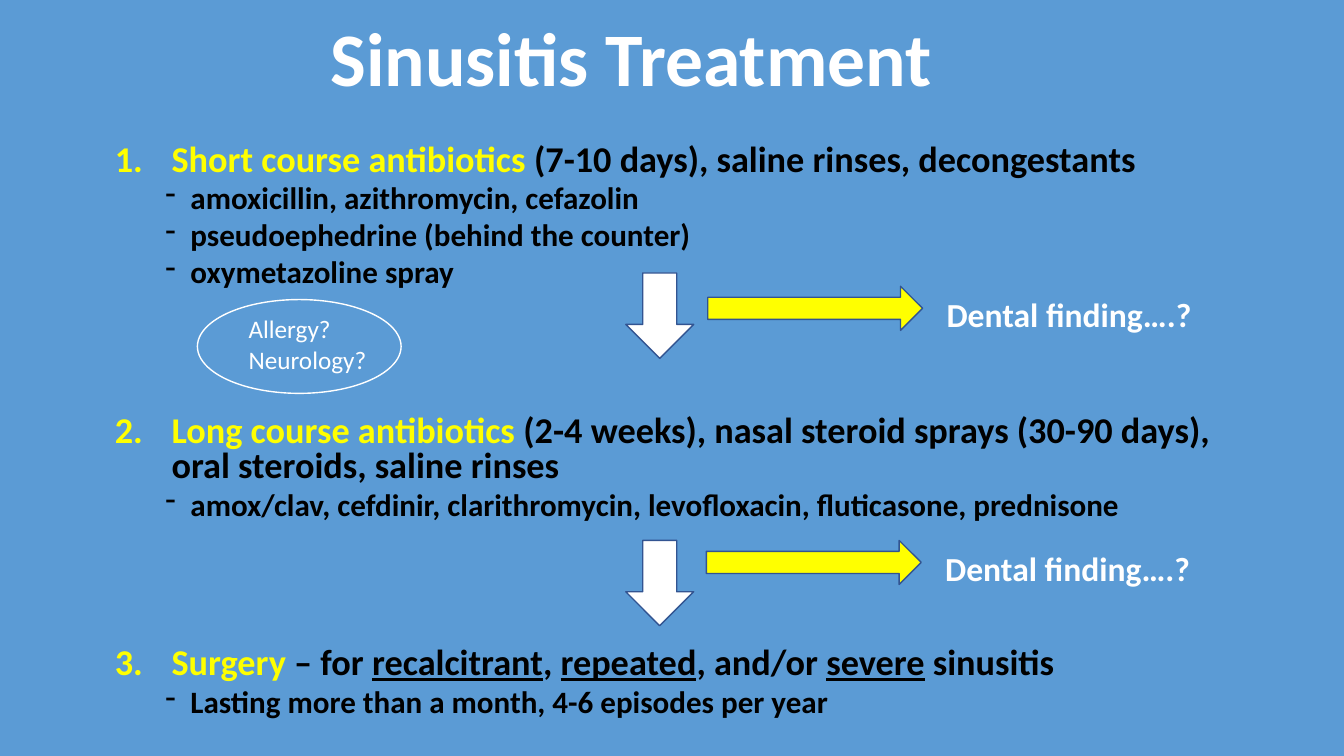
"""Build the sinusitis treatment slide: three numbered steps joined by arrows."""
from dataclasses import dataclass

from lxml.etree import SubElement
from pptx import Presentation
from pptx.dml.color import RGBColor
from pptx.enum.shapes import MSO_SHAPE as Preset
from pptx.enum.text import MSO_ANCHOR as Anchor, PP_ALIGN as Align
from pptx.oxml.ns import qn
from pptx.util import Pt


@dataclass(frozen=True)
class Theme:
    """Colours, font and type sizes."""
    font: str = "Calibri"
    background: str = "5B9BD5"
    white: str = "FFFFFF"
    black: str = "000000"
    yellow: str = "FFFF00"
    outline: str = "325491"
    title: float = 54
    step: float = 25.9
    detail: float = 22.2
    label: float = 24
    aside: float = 18


THEME = Theme()
TITLE = "Sinusitis Treatment"
STEPS = [
    ("Short course antibiotics ",
     [("(7-10 days), saline rinses, decongestants", False)],
     ["amoxicillin, azithromycin, cefazolin",
      "pseudoephedrine (behind the counter)",
      "oxymetazoline spray"]),
    ("Long course antibiotics ",
     [("(2-4 weeks), nasal steroid sprays (30-90 days), "
       "oral steroids, saline rinses", False)],
     ["amox/clav, cefdinir, clarithromycin, levofloxacin, "
      "fluticasone, prednisone"]),
    ("Surgery ",
     [("– for ", False), ("recalcitrant", True), (", ", False),
      ("repeated", True), (", and/or ", False), ("severe", True),
      (" sinusitis", False)],
     ["Lasting more than a month, 4-6 episodes per year"]),
]
BRANCH_LABEL = "Dental finding….?"
ASIDE = ["Allergy?", "Neurology?"]

SLIDE_SIZE = (960, 540)
TITLE_BOX = (66, -8, 770, 104.5)
STEPS_BOX = (75, 99.5, 828, 440)
ASIDE_BOX = (170.5, 220.5, 115, 51)
ASIDE_RING = (141, 214, 145.5, 67)
DOWN_LEFT, DOWN_SIZE = 447, (48.5, 61)
BRANCH_SIZE, LABEL_SIZE = (153.5, 31.5), (240, 36)
LABEL_OFFSET = (163.5, 2)
BRANCHES = [(195, (505.5, 204.5)), (386, (504.5, 386))]
STEP_INDENT, DETAIL_INDENT = (40.5, -40.5), (54, -18)
STEP_SPACE, DETAIL_SPACE, ARROW_GAP = 10, 5, 80


def add_run(paragraph, text, size, color, bold=True, underline=False):
    run = paragraph.add_run()
    run.text = text
    font = run.font
    font.name, font.size = THEME.font, Pt(size)
    font.bold, font.underline = bold, underline
    font.color.rgb = RGBColor.from_string(color)


def add_text_frame(slide, box, anchor=Anchor.TOP):
    frame = slide.shapes.add_textbox(*map(Pt, box)).text_frame
    frame.word_wrap = True
    frame.vertical_anchor = anchor
    return frame


def next_paragraph(frame):
    first = frame.paragraphs[0]
    return frame.add_paragraph() if first.runs else first


def add_list_paragraph(frame, indent, space, bullet, **attributes):
    paragraph = next_paragraph(frame)
    paragraph.line_spacing = 0.8
    paragraph.space_before = Pt(space)
    properties = paragraph._p.get_or_add_pPr()
    for key, value in zip(("marL", "indent"), indent):
        properties.set(key, str(Pt(value)))
    SubElement(properties, qn(bullet), attributes)
    return paragraph


def add_steps(slide):
    frame = add_text_frame(slide, STEPS_BOX)
    for number, (lead, rest, details) in enumerate(STEPS, start=1):
        space = STEP_SPACE + (ARROW_GAP if number > 1 else 0)
        heading = add_list_paragraph(frame, STEP_INDENT, space, "a:buAutoNum",
                                     type="arabicPeriod", startAt=str(number))
        add_run(heading, lead, THEME.step, THEME.yellow)
        for text, underline in rest:
            add_run(heading, text, THEME.step, THEME.black, underline=underline)
        for detail in details:
            paragraph = add_list_paragraph(frame, DETAIL_INDENT, DETAIL_SPACE,
                                           "a:buChar", char="-")
            paragraph.level = 1
            add_run(paragraph, detail, THEME.detail, THEME.black)


def add_preset(slide, preset, box, line, fill=None):
    shape = slide.shapes.add_shape(preset, *map(Pt, box))
    shape.shadow.inherit = False
    shape.line.color.rgb = RGBColor.from_string(line)
    shape.line.width = Pt(1)
    if fill:
        shape.fill.solid()
        shape.fill.fore_color.rgb = RGBColor.from_string(fill)
    else:
        shape.fill.background()


def add_branch(slide, down_top, branch):
    add_preset(slide, Preset.DOWN_ARROW, (DOWN_LEFT, down_top, *DOWN_SIZE),
               THEME.outline, THEME.white)
    add_preset(slide, Preset.RIGHT_ARROW, (*branch, *BRANCH_SIZE),
               THEME.outline, THEME.yellow)
    corner = [start + offset for start, offset in zip(branch, LABEL_OFFSET)]
    frame = add_text_frame(slide, (*corner, *LABEL_SIZE))
    add_run(frame.paragraphs[0], BRANCH_LABEL, THEME.label, THEME.white)


def main():
    presentation = Presentation()
    presentation.slide_width, presentation.slide_height = map(Pt, SLIDE_SIZE)
    slide = presentation.slides.add_slide(presentation.slide_layouts[6])
    slide.background.fill.solid()
    slide.background.fill.fore_color.rgb = RGBColor.from_string(THEME.background)

    title = add_text_frame(slide, TITLE_BOX, Anchor.MIDDLE).paragraphs[0]
    title.alignment = Align.CENTER
    title.line_spacing = 0.9
    add_run(title, TITLE, THEME.title, THEME.white)

    add_steps(slide)
    for down_top, branch in BRANCHES:
        add_branch(slide, down_top, branch)

    aside = add_text_frame(slide, ASIDE_BOX)
    for text in ASIDE:
        add_run(next_paragraph(aside), text, THEME.aside, THEME.white, bold=False)
    add_preset(slide, Preset.OVAL, ASIDE_RING, THEME.white)

    presentation.save("out.pptx")


if __name__ == "__main__":
    main()
